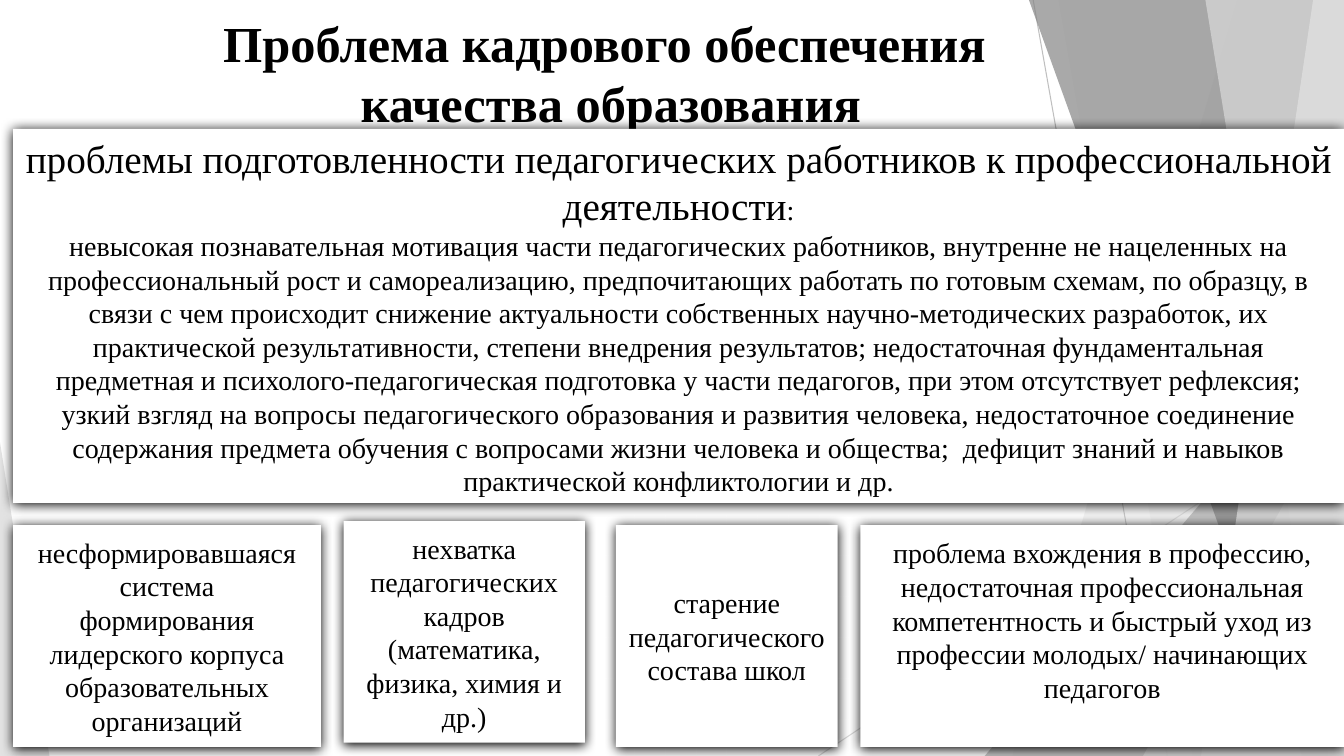
from dataclasses import dataclass

from lxml import etree
from pptx import Presentation
from pptx.dml.color import RGBColor
from pptx.enum.shapes import MSO_CONNECTOR, MSO_SHAPE
from pptx.enum.text import MSO_ANCHOR, PP_ALIGN
from pptx.oxml.ns import qn
from pptx.util import Pt

STRAIGHT = MSO_CONNECTOR.STRAIGHT
RECTANGLE = MSO_SHAPE.RECTANGLE
TRIANGLE = MSO_SHAPE.ISOSCELES_TRIANGLE
MIDDLE = MSO_ANCHOR.MIDDLE
CENTER = PP_ALIGN.CENTER

SLIDE_W, SLIDE_H = 960, 540
FONT = "Times New Roman"
COLORS = {
    "white": "FFFFFF",
    "black": "000000",
    "line_dark": "BFBFBF",
    "line_light": "D9D9D9",
    "pale": "DDDDDD",
    "silver": "B2B2B2",
    "gray": "858585",
    "mist": "EBEBEB",
}


@dataclass(frozen=True)
class Ray:
    start: tuple[float, float]
    end: tuple[float, float]
    color: str


@dataclass(frozen=True)
class Band:
    top_x: float
    bottom_x: float
    color: str
    opacity: int


@dataclass(frozen=True)
class Wedge:
    left: float
    top: float
    width: float
    apex: float
    color: str
    opacity: int


@dataclass(frozen=True)
class Phrase:
    text: str
    size: float = 20
    bold: bool = False


@dataclass(frozen=True)
class Card:
    left: float
    top: float
    width: float
    height: float
    paragraphs: list[list[Phrase]]
    bottom_inset: float = 3.6


RAYS = [
    Ray((738, 0), (833.8, SLIDE_H), "line_dark"),
    Ray((SLIDE_W, 290.2), (584.6, SLIDE_H), "line_light"),
]
FACETS = [
    Band(884.2, 722.9, "pale", 30),
    Band(756, 851.8, "pale", 20),
    Wedge(703.4, 239.8, 256.6, 1, "silver", 72),
    Band(735.1, 929.5, "gray", 70),
    Band(938.2, 858.2, "mist", 70),
    Band(861.1, 949, "pale", 65),
    Wedge(816.5, 283, 143.5, 1, "pale", 80),
    Wedge(0, 316, 35.3, 0, "pale", 85),
]
TITLE = [[Phrase("Проблема кадрового обеспечения \nкачества образования", 36, True)]]
READINESS = [
    [
        Phrase("проблемы подготовленности педагогических работников "
               "к профессиональной деятельности", 28),
        Phrase(":"),
    ],
    [Phrase(
        "невысокая познавательная мотивация части педагогических работников, "
        "внутренне не нацеленных на профессиональный рост и самореализацию, "
        "предпочитающих работать по готовым схемам, по образцу, в связи с чем "
        "происходит снижение актуальности собственных научно-методических "
        "разработок, их практической результативности, степени внедрения "
        "результатов; недостаточная фундаментальная предметная и "
        "психолого-педагогическая подготовка у части педагогов, при этом "
        "отсутствует рефлексия; узкий взгляд на вопросы педагогического "
        "образования и развития человека, недостаточное соединение содержания "
        "предмета обучения с вопросами жизни человека и общества;  дефицит "
        "знаний и навыков практической конфликтологии и др."
    )],
]
SHORTAGE = [[Phrase("нехватка педагогических кадров (математика, физика, химия и др.)")]]
LEADERSHIP = [[Phrase("несформировавшаяся система\nформирования лидерского корпуса "
                      "образовательных организаций")]]
AGEING = [[Phrase("старение педагогического состава школ")]]
NEWCOMERS = [[Phrase("проблема вхождения в профессию,\nнедостаточная профессиональная "
                     "компетентность и быстрый уход из профессии молодых/ "
                     "начинающих педагогов")]]
ROW_TOP, ROW_H = 375.2, 158.4
CARDS = [
    Card(9.4, 92, 950.6, 267.2, READINESS),
    Card(245.5, 372.2, 172.2, ROW_H, SHORTAGE),
    Card(9.4, ROW_TOP, 219.8, ROW_H, LEADERSHIP),
    Card(440, ROW_TOP, 158.4, ROW_H, AGEING),
    Card(614.6, ROW_TOP, 345.4, ROW_H, NEWCOMERS, 26.6),
]


def rgb(name: str) -> RGBColor:
    return RGBColor.from_string(COLORS[name])


def paint(shape, color: str, opacity: int = 100) -> None:
    shape.shadow.inherit = False
    shape.line.fill.background()
    shape.fill.solid()
    shape.fill.fore_color.rgb = rgb(color)
    if opacity < 100:
        tint = shape.fill._xPr.find(qn("a:solidFill"))[0]
        etree.SubElement(tint, qn("a:alpha"), val=str(opacity * 1000))


def cast_shadow(shape) -> None:
    effects = shape._element.spPr.find(qn("a:effectLst"))
    shadow = etree.SubElement(
        effects, qn("a:outerShdw"), blurRad=str(Pt(8.5)), dist=str(Pt(1)),
        dir="5400000", algn="ctr", rotWithShape="0")
    etree.SubElement(shadow, qn("a:srgbClr"), val=COLORS["black"])


def write(frame, paragraphs: list[list[Phrase]]) -> None:
    frame.word_wrap = True
    frame.vertical_anchor = MIDDLE
    for index, phrases in enumerate(paragraphs):
        paragraph = frame.add_paragraph() if index else frame.paragraphs[0]
        paragraph.alignment = CENTER
        for phrase in phrases:
            for number, line in enumerate(phrase.text.split("\n")):
                if number:
                    paragraph.add_line_break()
                run = paragraph.add_run()
                run.text = line
                run.font.name = FONT
                run.font.size = Pt(phrase.size)
                run.font.bold = phrase.bold
                run.font.color.rgb = rgb("black")


def draw_ray(shapes, ray: Ray) -> None:
    line = shapes.add_connector(
        STRAIGHT, *(Pt(value) for value in ray.start + ray.end))
    line.line.color.rgb = rgb(ray.color)
    line.line.width = Pt(0.75)
    etree.SubElement(line._element.spPr, qn("a:effectLst"))


def draw_facet(shapes, facet: Band | Wedge) -> None:
    if isinstance(facet, Band):
        builder = shapes.build_freeform(facet.top_x, 0, scale=Pt(1))
        builder.add_line_segments(
            [(SLIDE_W, 0), (SLIDE_W, SLIDE_H), (facet.bottom_x, SLIDE_H)])
        shape = builder.convert_to_shape()
    else:
        shape = shapes.add_shape(
            TRIANGLE, Pt(facet.left), Pt(facet.top),
            Pt(facet.width), Pt(SLIDE_H - facet.top))
        shape.adjustments[0] = facet.apex
    paint(shape, facet.color, facet.opacity)


def draw_card(shapes, card: Card) -> None:
    shape = shapes.add_shape(
        RECTANGLE, Pt(card.left), Pt(card.top), Pt(card.width), Pt(card.height))
    paint(shape, "white")
    cast_shadow(shape)
    shape.text_frame.margin_bottom = Pt(card.bottom_inset)
    write(shape.text_frame, card.paragraphs)


def main() -> None:
    deck = Presentation()
    deck.slide_width, deck.slide_height = Pt(SLIDE_W), Pt(SLIDE_H)
    shapes = deck.slides.add_slide(deck.slide_layouts[6]).shapes
    for ray in RAYS:
        draw_ray(shapes, ray)
    for facet in FACETS:
        draw_facet(shapes, facet)
    heading = shapes.add_textbox(Pt(39.6), Pt(0), Pt(793.4), Pt(103.7))
    write(heading.text_frame, TITLE)
    for card in CARDS:
        draw_card(shapes, card)
    deck.save("out.pptx")


if __name__ == "__main__":
    main()
